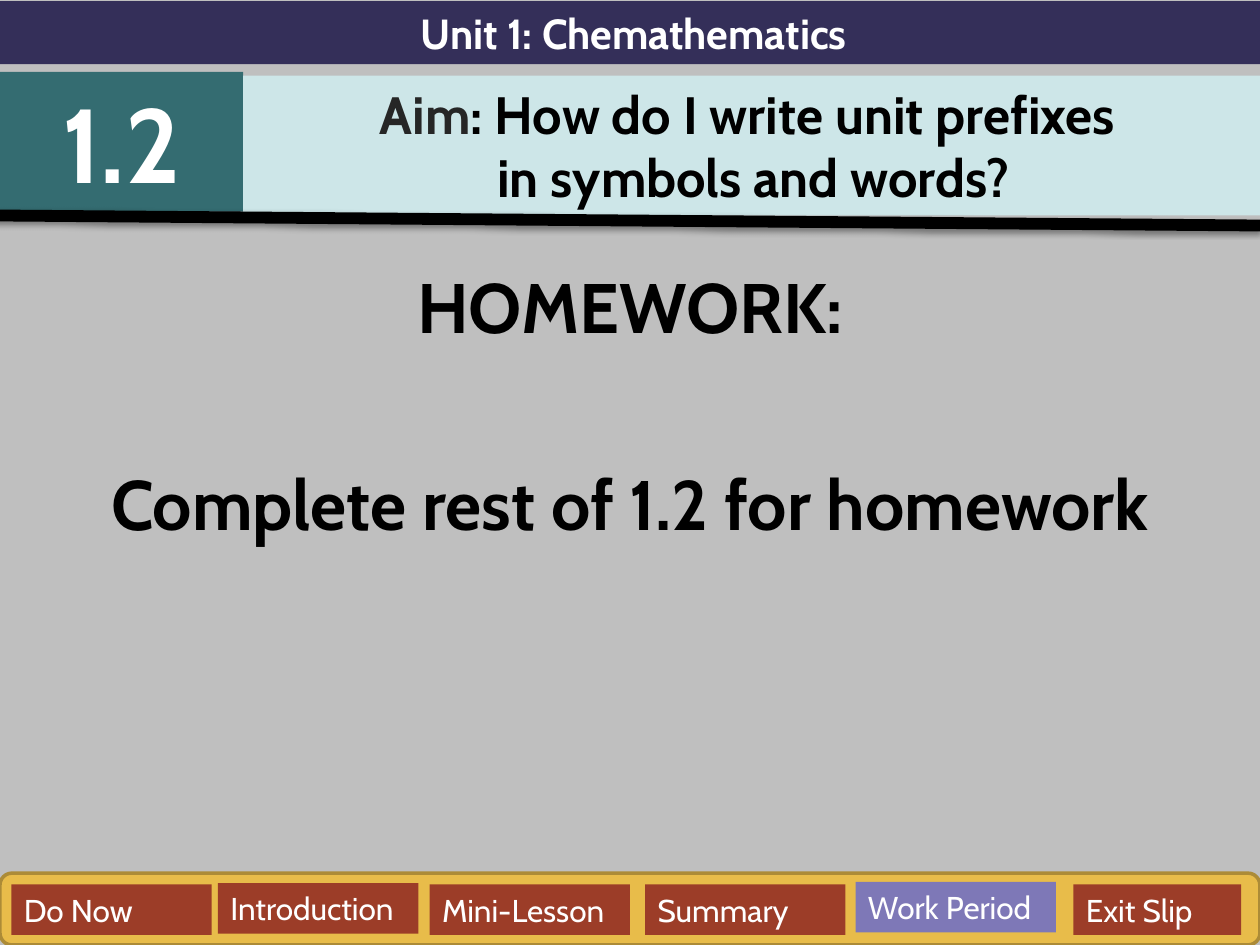
from dataclasses import dataclass

from lxml.etree import SubElement
from pptx import Presentation
from pptx.dml.color import RGBColor
from pptx.enum.shapes import MSO_CONNECTOR, MSO_SHAPE
from pptx.enum.text import MSO_ANCHOR, PP_ALIGN
from pptx.oxml.ns import qn
from pptx.util import Inches, Pt


@dataclass(frozen=True)
class Theme:
    """Colours, font and type sizes of the lesson slide."""
    font: str = "Cabin"
    page: str = "BFBFBF"
    black: str = "000000"
    white: str = "FFFFFF"
    charcoal: str = "262626"
    unit: str = "342F59"
    number: str = "346C71"
    aim: str = "CDE6E8"
    bar: str = "E8BC4A"
    bar_edge: str = "AC8B37"
    tab: str = "9C3D28"
    active_tab: str = "7E78B7"
    unit_size: int = 24
    number_size: int = 60
    aim_size: int = 30
    body_size: int = 40
    tab_size: int = 18


THEME = Theme()


def rgb(value):
    """Turn a hex string into a colour."""
    return RGBColor.from_string(value)


def apply_format(target, values):
    """Set each attribute named in a dict of format values."""
    for name, value in values.items():
        setattr(target, name, value)


def write(frame, paragraphs, size, bold=True, align=PP_ALIGN.CENTER, gap=0):
    """Fill a text frame with paragraphs, each a list of (text, colour) runs."""
    apply_format(frame, {"word_wrap": True, "vertical_anchor": MSO_ANCHOR.TOP})
    for index, runs in enumerate(paragraphs):
        paragraph = frame.add_paragraph() if index else frame.paragraphs[0]
        apply_format(paragraph, {"alignment": align, "space_before": Pt(gap if index else 0)})
        for text, colour in runs:
            run = paragraph.add_run()
            run.text = text
            apply_format(run.font, {"name": THEME.font, "size": Pt(size), "bold": bold})
            run.font.color.rgb = rgb(colour)


def add_panel(slide, box, fill, preset=MSO_SHAPE.RECTANGLE):
    """Add a flat filled panel without outline."""
    panel = slide.shapes.add_shape(preset, *map(Inches, box))
    panel.shadow.inherit = False
    panel.fill.solid()
    panel.fill.fore_color.rgb = rgb(fill)
    panel.line.fill.background()
    return panel


def add_header(slide, box):
    """Place the unit title, the lesson number and the aim."""
    left, top, width, number_width = *box, 1.93
    title = add_panel(slide, (left, top, width, 0.5), THEME.unit)
    write(title.text_frame, [[("Unit 1: Chemathematics", THEME.white)]], THEME.unit_size)
    number = add_panel(slide, (left, top + 0.56, number_width, 1.11), THEME.number)
    write(number.text_frame, [[("1.2", THEME.white)]], THEME.number_size)
    aim = add_panel(slide, (left + number_width, top + 0.59, 8.1, 1.11), THEME.aim)
    aim_lines = [
        [("Aim", THEME.charcoal), (": How do I write unit prefixes ", THEME.black)],
        [("in symbols and words?", THEME.black)],
    ]
    write(aim.text_frame, aim_lines, THEME.aim_size)


def add_divider(slide, start, end):
    """Draw the heavy sloping rule with its soft shadow."""
    rule = slide.shapes.add_connector(MSO_CONNECTOR.STRAIGHT, *map(Inches, (*start, *end)))
    rule.line.color.rgb = rgb(THEME.black)
    rule.line.width = Pt(6.75)
    effects = SubElement(rule._element.spPr, qn("a:effectLst"))
    shadow = SubElement(effects, qn("a:outerShdw"), blurRad=str(Pt(3.1)),
                        dist=str(Pt(1.6)), dir="5400000", rotWithShape="0")
    shade = SubElement(shadow, qn("a:srgbClr"), val=THEME.black)
    SubElement(shade, qn("a:alpha"), val="38000")


def add_homework(slide, box):
    """Place the homework heading and task."""
    homework = slide.shapes.add_textbox(*map(Inches, box))
    lines = [[(text, THEME.black)] for text in ("HOMEWORK:", "Complete rest of 1.2 for homework")]
    write(homework.text_frame, lines, THEME.body_size, gap=64.5)


def add_navigation(slide, box, active):
    """Place the lesson stage tabs on their rounded bar."""
    left, top, width, height = box
    bar = add_panel(slide, box, THEME.bar, MSO_SHAPE.ROUNDED_RECTANGLE)
    bar.line.color.rgb = rgb(THEME.bar_edge)
    bar.line.width = Pt(2)
    stages = [
        ("Do Now", 0.09, 0.09, 1.59),
        ("Introduction", 1.73, 0.08, 1.59),
        ("Mini-Lesson", 3.41, 0.09, 1.59),
        ("Summary", 5.12, 0.09, 1.59),
        ("Work Period", 6.79, 0.07, 1.59),
        ("Exit Slip", 8.52, 0.09, 1.33),
    ]
    for stage, offset, drop, tab_width in stages:
        fill = THEME.active_tab if stage == active else THEME.tab
        tab = add_panel(slide, (left + offset, top + drop, tab_width, 0.4), fill)
        write(tab.text_frame, [[(stage, THEME.white)]], THEME.tab_size, False, PP_ALIGN.LEFT)


def main():
    """Build and save the homework slide."""
    deck = Presentation()
    apply_format(deck, {"slide_width": Inches(10), "slide_height": Inches(7.5)})
    slide = deck.slides.add_slide(deck.slide_layouts[6])
    slide.background.fill.solid()
    slide.background.fill.fore_color.rgb = rgb(THEME.page)
    add_homework(slide, (0, 2.04, 10, 5.46))
    add_header(slide, (0, 0.01, 10.06))
    add_divider(slide, (-0.05, 1.71), (10, 1.79))
    add_navigation(slide, (0, 6.93, 10, 0.57), active="Work Period")
    deck.save("out.pptx")


if __name__ == "__main__":
    main()
